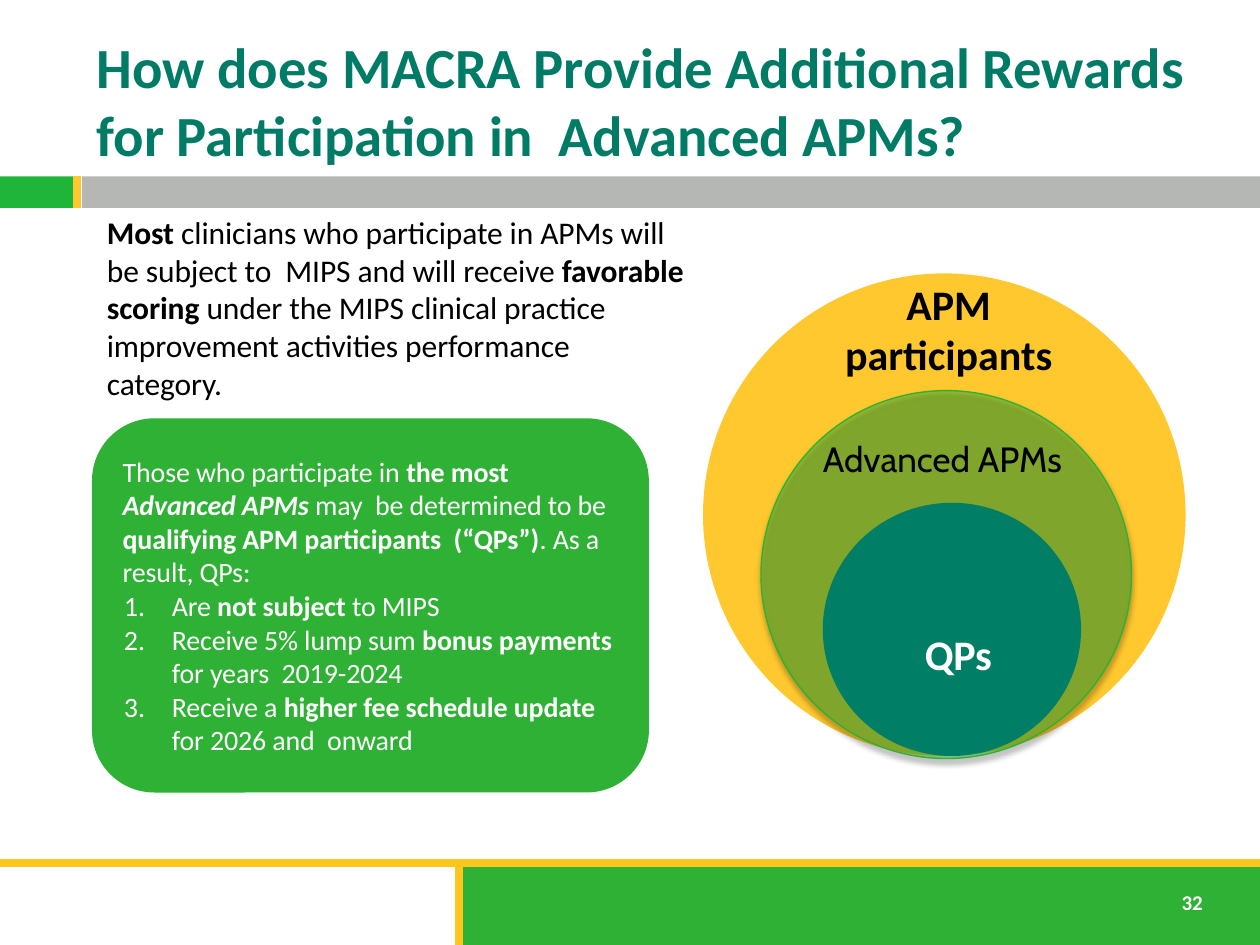
from pptx import Presentation
from pptx.dml.color import RGBColor
from pptx.enum.shapes import MSO_CONNECTOR, MSO_SHAPE
from pptx.enum.text import MSO_ANCHOR, PP_ALIGN
from pptx.oxml import parse_xml
from pptx.oxml.ns import nsdecls, qn
from pptx.oxml.xmlchemy import OxmlElement
from pptx.util import Inches, Pt

GREEN, TEAL, GOLD, YELLOW = "2EB135", "007E66", "FFC82E", "FFC61E"
WHITE, BLACK = "FFFFFF", "000000"


def color(value):
    return RGBColor.from_string(value)


def add_shape(slide, kind, box, fill):
    shape = slide.shapes.add_shape(kind, *map(Inches, box))
    shape.shadow.inherit = False
    shape.fill.solid()
    shape.fill.fore_color.rgb = color(fill)
    shape.line.fill.background()
    return shape


def add_line(slide, x1, y1, x2, y2, tint):
    line = slide.shapes.add_connector(
        MSO_CONNECTOR.STRAIGHT, *map(Inches, (x1, y1, x2, y2)))
    line.line.color.rgb = color(tint)
    line.line.width = Pt(4.5)
    line._element.spPr.append(OxmlElement("a:effectLst"))


def add_box(slide, box):
    return slide.shapes.add_textbox(*map(Inches, box))


def number(para):
    props = para._p.get_or_add_pPr()
    props.set("marL", str(Inches(0.39)))
    props.set("indent", str(Inches(-0.38)))
    bullet = OxmlElement("a:buAutoNum")
    bullet.set("type", "arabicPeriod")
    props.append(bullet)


def write(shape, paras, size, tint, font="Calibri", align=PP_ALIGN.LEFT,
          anchor=MSO_ANCHOR.TOP, inset=None, leading=None, wrap=True,
          spacing=-0.1, numbered_from=None):
    """Fill a shape with paragraphs of (text, style) runs; style holds b and i."""
    frame = shape.text_frame
    frame.word_wrap = wrap
    frame.vertical_anchor = anchor
    if inset is not None:
        frame.margin_left = frame.margin_right = Inches(inset)
        frame.margin_top = frame.margin_bottom = Inches(inset)
    for index, runs in enumerate(paras):
        para = frame.add_paragraph() if index else frame.paragraphs[0]
        para.alignment = align
        if leading:
            para.line_spacing = Pt(leading)
        if numbered_from is not None and index >= numbered_from:
            number(para)
        for text, style in runs:
            run = para.add_run()
            run.text = text
            run.font.name = font
            run.font.size = Pt(size)
            run.font.bold = "b" in style
            run.font.italic = "i" in style
            run.font.color.rgb = color(tint)
            if spacing:
                run._r.get_or_add_rPr().set("spc", str(round(spacing * 100)))


def add_header(slide, top):
    height = 0.25
    add_shape(slide, MSO_SHAPE.RECTANGLE, (0, top, 0.58, height), "1EB53A")
    add_shape(slide, MSO_SHAPE.RECTANGLE, (0.65, top, 9.35, height), "B5B7B4")
    add_line(slide, 0.61, top, 0.61, top + height, GOLD)
    title = "How does MACRA Provide Additional Rewards for Participation in  Advanced APMs?"
    write(add_box(slide, (0.67, top - 1.15, 8.92, 1.08)), [[(title, "b")]],
          32.4, "007C66", anchor=MSO_ANCHOR.MIDDLE, spacing=-0.05)


def add_footer(slide, top):
    split = 3.62
    add_shape(slide, MSO_SHAPE.RECTANGLE,
              (split, top, 10 - split, 7.5 - top), GREEN)
    add_line(slide, 0, top + 0.01, 10, top + 0.01, YELLOW)
    add_line(slide, split + 0.02, top + 0.02, split + 0.02, 7.5, YELLOW)
    write(add_box(slide, (9.28, top + 0.17, 0.4, 0.3)), [[("32", "b")]],
          12, WHITE, wrap=False, spacing=0)


def add_intro(slide, box):
    runs = [
        ("Most ", "b"),
        ("clinicians who participate in APMs will be subject to  MIPS and will receive ", ""),
        ("favorable  scoring ", "b"),
        ("under the MIPS clinical practice  improvement activities performance  category.", ""),
    ]
    write(add_box(slide, box), [runs], 18, BLACK, spacing=-0.07)


def add_panel(slide, box):
    panel = add_shape(slide, MSO_SHAPE.ROUNDED_RECTANGLE, box, GREEN)
    paras = [
        [("Those who participate in ", ""), ("the most ", "b"),
         ("Advanced APMs ", "bi"), ("may  be determined to be ", ""),
         ("qualifying APM participants  (“QPs”)", "b"),
         (". As a result, QPs:", "")],
        [("Are ", ""), ("not subject ", "b"), ("to MIPS", "")],
        [("Receive 5% lump sum ", ""), ("bonus payments ", "b"),
         ("for years  2019-2024", "")],
        [("Receive a ", ""), ("higher fee schedule update ", "b"),
         ("for 2026 and  onward", "")],
    ]
    write(panel, paras, 16, WHITE, anchor=MSO_ANCHOR.MIDDLE,
          spacing=-0.07, numbered_from=1)


def soften(shape):
    """Make the fill see-through and drop a soft shadow below the shape."""
    props = shape._element.spPr
    tint = props.find(qn("a:solidFill"))[0]
    alpha = OxmlElement("a:alpha")
    alpha.set("val", "60000")
    tint.append(alpha)
    alpha.set("val", "47000")
    shape.line.color.rgb = color(GREEN)
    shape.line.width = Pt(0.79)
    effects = props.find(qn("a:effectLst"))
    effects.append(parse_xml(
        f'<a:outerShdw {nsdecls("a")} blurRad="{Pt(3)}" dist="{Pt(2.4)}" '
        'dir="5400000" rotWithShape="0"><a:srgbClr val="000000">'
        '<a:alpha val="45000"/></a:srgbClr></a:outerShdw>'))


def add_circles(slide, left, top):
    """Nest the three groups of clinicians, widest at the back."""
    def place(x, y, width, height):
        return left + x, top + y, width, height

    add_shape(slide, MSO_SHAPE.OVAL, place(0, 0, 3.83, 3.83), GOLD)
    soften(add_shape(slide, MSO_SHAPE.OVAL, place(0.46, 0.93, 2.94, 2.92), GREEN))
    add_shape(slide, MSO_SHAPE.OVAL, place(0.95, 1.82, 2.05, 2.01), TEAL)
    write(add_box(slide, place(1, 0.04, 1.9, 0.81)),
          [[("APM", "b")], [("participants", "b")]], 24, BLACK,
          align=PP_ALIGN.CENTER, inset=0, leading=28.7, spacing=0)
    write(add_box(slide, place(0.82, 1.25, 2.16, 0.44)),
          [[("Advanced APMs", "")]], 20, BLACK, font="Cabin",
          align=PP_ALIGN.CENTER, spacing=0)
    write(add_box(slide, place(1.76, 2.82, 1, 0.4)),
          [[("QPs", "b")]], 24, WHITE, inset=0)


def main():
    deck = Presentation()
    deck.slide_width, deck.slide_height = Inches(10), Inches(7.5)
    slide = deck.slides.add_slide(deck.slide_layouts[6])
    add_header(slide, 1.4)
    add_footer(slide, 6.84)
    add_circles(slide, 5.58, 2.17)
    add_intro(slide, (0.75, 1.64, 4.84, 1.92))
    add_panel(slide, (0.73, 3.32, 4.42, 2.97))
    deck.save("out.pptx")


if __name__ == "__main__":
    main()
